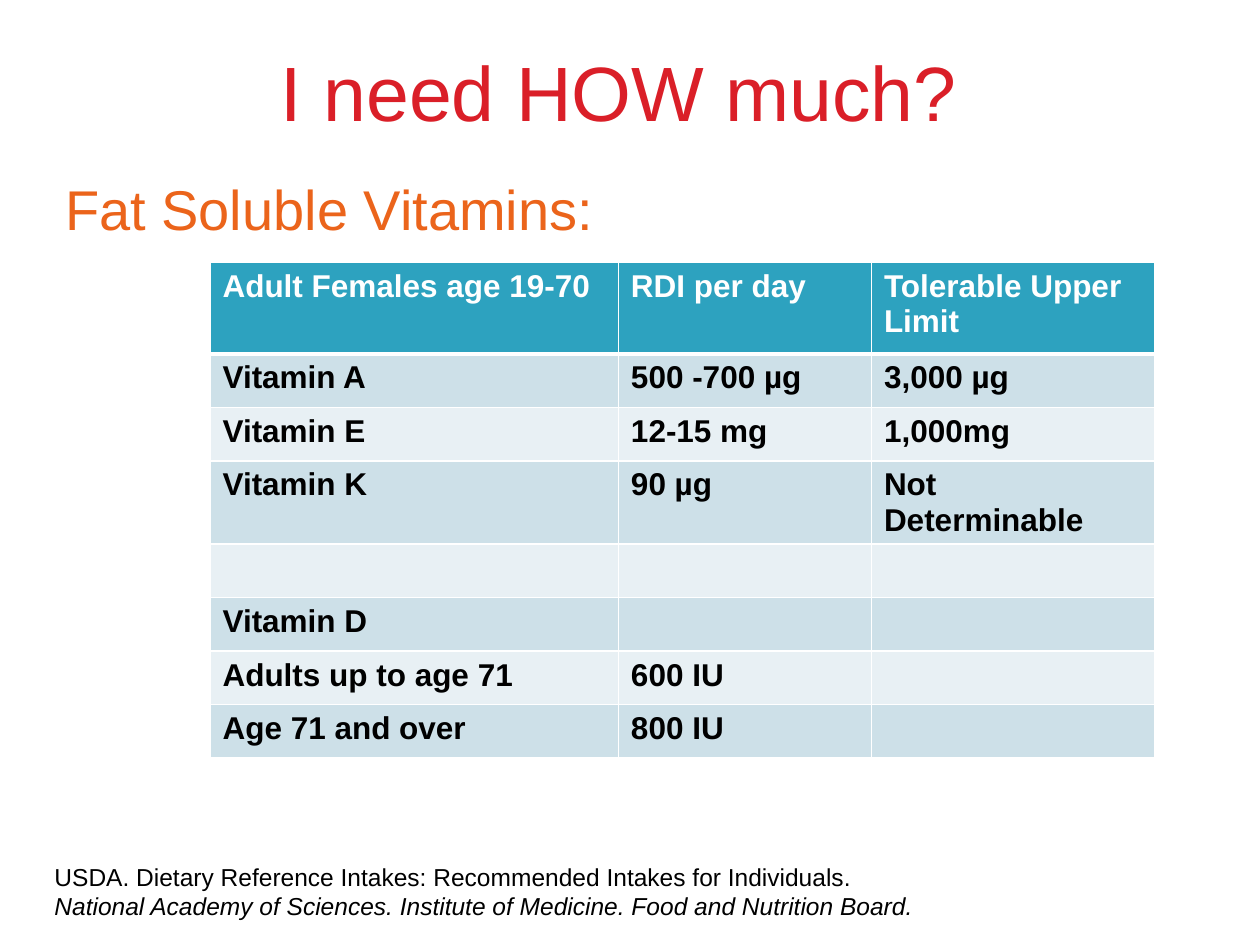
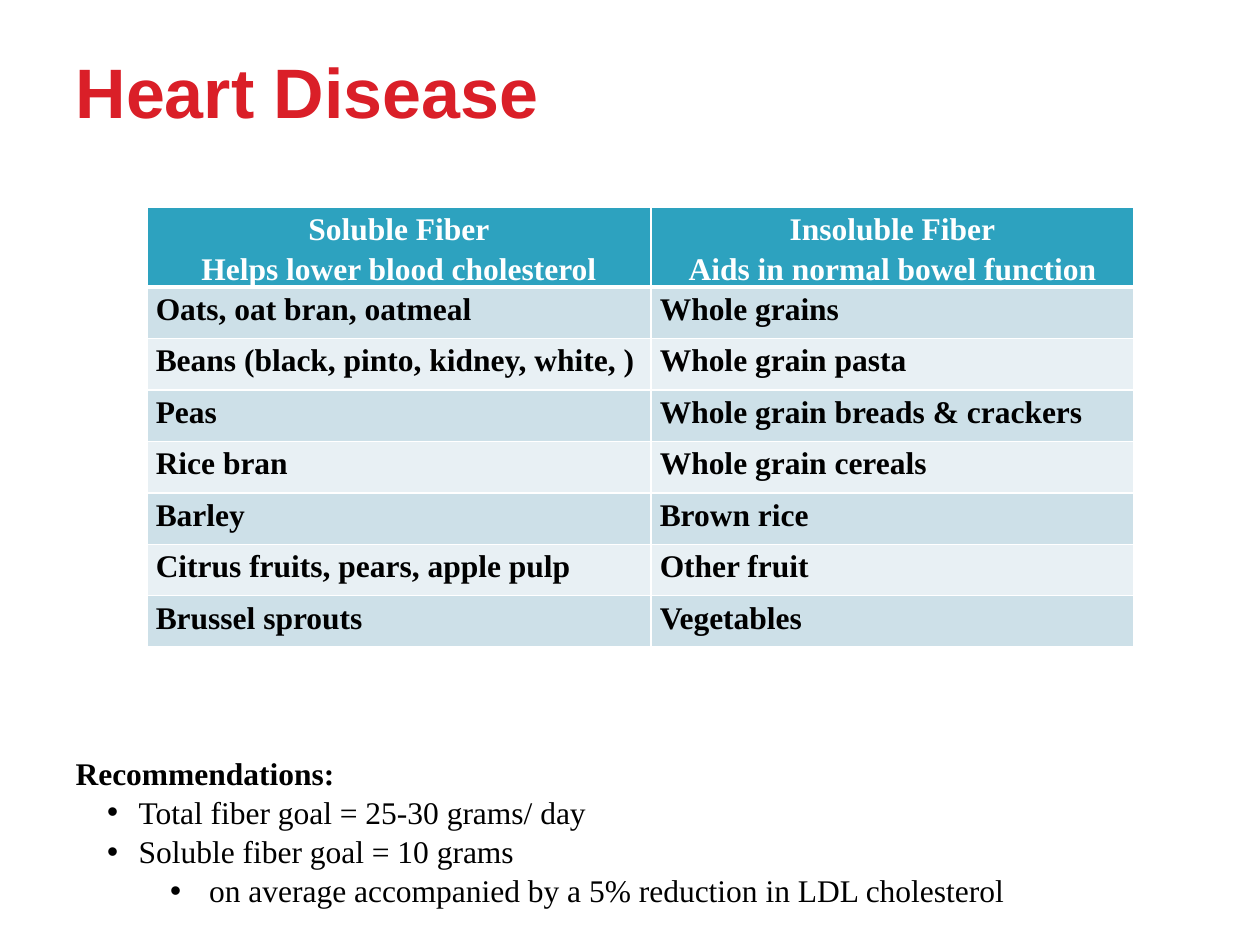
from lxml.etree import SubElement
from pptx import Presentation
from pptx.dml.color import RGBColor
from pptx.enum.text import MSO_ANCHOR as Anchor, MSO_AUTO_SIZE as AutoSize, PP_ALIGN as Align
from pptx.oxml import parse_xml
from pptx.oxml.ns import nsdecls, qn
from pptx.util import Inches, Pt

RED = RGBColor(0xDA, 0x1F, 0x28)
ORANGE = RGBColor(0xEB, 0x64, 0x1B)
TEAL = RGBColor(0x2D, 0xA2, 0xBF)
BLUE_BAND = RGBColor(0xCD, 0xE0, 0xE8)
PALE_BAND = RGBColor(0xE8, 0xF0, 0xF4)
BLACK = RGBColor(0, 0, 0)
WHITE = RGBColor(0xFF, 0xFF, 0xFF)
SANS, SERIF = "Arial", "Times New Roman"
COLUMNS, ROWS = 120, 90  # page grid


class Pages:
    """Holds the shared style and the page being filled."""

    def __init__(self):
        self.deck = Presentation()
        self.deck.slide_width, self.deck.slide_height = Inches(10), Inches(7.5)
        self.page = None

    def new_page(self):
        self.page = self.deck.slides.add_slide(self.deck.slide_layouts[1])

    def x(self, columns):
        return round(self.deck.slide_width * columns / COLUMNS)

    def y(self, rows):
        return round(self.deck.slide_height * rows / ROWS)

    def area(self, left, top, width, height):
        return self.x(left), self.y(top), self.x(width), self.y(height)

    def span(self, para, text, size, color, font=SANS, bold=False, italic=False):
        run = para.add_run()
        run.text = text
        run.font.name, run.font.size = font, Pt(size)
        run.font.bold, run.font.italic = bold, italic
        run.font.color.rgb = color

    def placeholder(self, box, area):
        box.left, box.top, box.width, box.height = self.area(*area)
        frame = box.text_frame
        frame.auto_size, frame.word_wrap = AutoSize.NONE, True
        frame.vertical_anchor = Anchor.TOP
        return frame

    def title(self, text, size, area, align, bold=False):
        frame = self.placeholder(self.page.shapes.title, area)
        para = frame.paragraphs[0]
        para.alignment = align
        self.span(para, text, size, RED, bold=bold)
        return frame

    def body(self, area):
        return self.placeholder(self.page.placeholders[1], area)

    def bullet(self, para, level=0, margin=0, hanging=0):
        """Set the indent; only a hanging paragraph gets a bullet."""
        para.level = level
        props = para._p.get_or_add_pPr()
        props.set("marL", str(Inches(margin)))
        props.set("indent", str(-Inches(hanging)))
        if hanging:
            SubElement(props, qn("a:buChar")).set("char", "•")
        else:
            SubElement(props, qn("a:buNone"))
        para.space_before = Pt(0)

    def note(self, area, spans):
        box = self.page.shapes.add_textbox(*self.area(*area))
        box.text_frame.word_wrap = True
        for text, italic in spans:
            self.span(box.text_frame.paragraphs[0], text, 14, BLACK, italic=italic)

    def borders(self, cell, row):
        widths = {"L": 1, "R": 1, "T": 3 if row == 1 else 1, "B": 3 if row == 0 else 1}
        props = cell._tc.get_or_add_tcPr()
        for place, (side, width) in enumerate(widths.items()):
            props.insert(place, parse_xml(
                f'<a:ln{side} {nsdecls("a")} w="{Pt(width)}"><a:solidFill>'
                f'<a:srgbClr val="{WHITE}"/></a:solidFill></a:ln{side}>'))

    def table(self, left, top, widths, heights, rows, font=SANS, compact=False):
        area = self.area(left, top, sum(widths), sum(heights))
        grid = self.page.shapes.add_table(len(rows), len(widths), *area).table
        for column, width in zip(grid.columns, widths):
            column.width = self.x(width)
        for index, (row, height) in enumerate(zip(rows, heights)):
            grid.rows[index].height = self.y(height)
            fill = TEAL if index == 0 else BLUE_BAND if index % 2 else PALE_BAND
            for cell, text in zip(grid.rows[index].cells, row):
                cell.fill.solid()
                cell.fill.fore_color.rgb = fill
                self.borders(cell, index)
                if compact:
                    cell.margin_left = cell.margin_right = Inches(0.07)
                    cell.margin_top = cell.margin_bottom = 0
                for number, line in enumerate(text.split("\n") if text else []):
                    frame = cell.text_frame
                    para = frame.add_paragraph() if number else frame.paragraphs[0]
                    if compact:
                        para.line_spacing = 1.15
                        para.alignment = Align.LEFT if index else Align.CENTER
                    self.span(para, line, 18, BLACK if index else WHITE, font, bold=True)


def vitamins(pages):
    pages.new_page()
    pages.title("I need HOW much? ", 44, (6, 3.6, 108, 15), Align.CENTER)
    para = pages.body((5, 16, 108, 59.4)).paragraphs[0]
    pages.bullet(para)
    pages.span(para, "Fat Soluble Vitamins:", 32, ORANGE)

    # Daily intake table
    intakes = [
        ("Adult Females age 19-70", "RDI per day", "Tolerable Upper Limit"),
        ("Vitamin A", "500 -700 µg", "3,000 µg"),
        ("Vitamin E", "12-15 mg", "1,000mg"),
        ("Vitamin K", "90 µg", "Not Determinable"),
        ("", "", ""),
        ("Vitamin D", "", ""),
        ("Adults up to age 71", "600 IU", ""),
        ("Age 71 and over", "800 IU", ""),
    ]
    pages.table(20, 25, [38.9, 24.1, 27], [8.7] + [5.1] * 7, intakes)

    # Reference
    pages.note((4, 81.5, 86, 7.5), [
        ("USDA. Dietary Reference Intakes: Recommended Intakes for Individuals. ", False),
        ("National Academy of Sciences. Institute of Medicine. Food and Nutrition Board.", True),
    ])


def heart_disease(pages):
    pages.new_page()
    frame = pages.title("Heart Disease", 40, (6, 6, 108, 15), Align.LEFT, bold=True)
    frame.vertical_anchor, frame.margin_bottom = Anchor.BOTTOM, Inches(0.7)

    # Fiber sources
    fibers = [
        ("Soluble Fiber\nHelps lower blood cholesterol",
         "Insoluble Fiber\nAids in normal bowel function"),
        ("Oats, oat bran, oatmeal", "Whole grains"),
        ("Beans (black, pinto, kidney, white, )", "Whole grain pasta"),
        ("Peas", "Whole grain breads & crackers"),
        ("Rice bran", "Whole grain cereals"),
        ("Barley", "Brown rice"),
        ("Citrus fruits, pears, apple pulp", "Other fruit"),
        ("Brussel sprouts", "Vegetables"),
    ]
    pages.table(14, 19.7, [48, 46], [4.9] * 8, fibers, SERIF, compact=True)

    # Recommendations: text, level, margin, hanging indent
    advice = [
        ("Recommendations:", 0, 0, 0),
        ("Total fiber goal = 25-30 grams/ day", 1, 0.5, 0.25),
        ("Soluble fiber goal = 10 grams", 1, 0.5, 0.25),
        ("on average accompanied by a 5% reduction in LDL cholesterol", 2, 1.06, 0.31),
    ]
    frame = pages.body((6, 71.2, 103, 15.8))
    for number, (text, level, margin, hanging) in enumerate(advice):
        para = frame.add_paragraph() if number else frame.paragraphs[0]
        pages.bullet(para, level, margin, hanging)
        if number:
            para.space_before = Pt(0.8)
        pages.span(para, text, 18, BLACK, SERIF, bold=number == 0)


def main():
    pages = Pages()
    vitamins(pages)
    heart_disease(pages)
    pages.deck.save("out.pptx")


if __name__ == "__main__":
    main()
